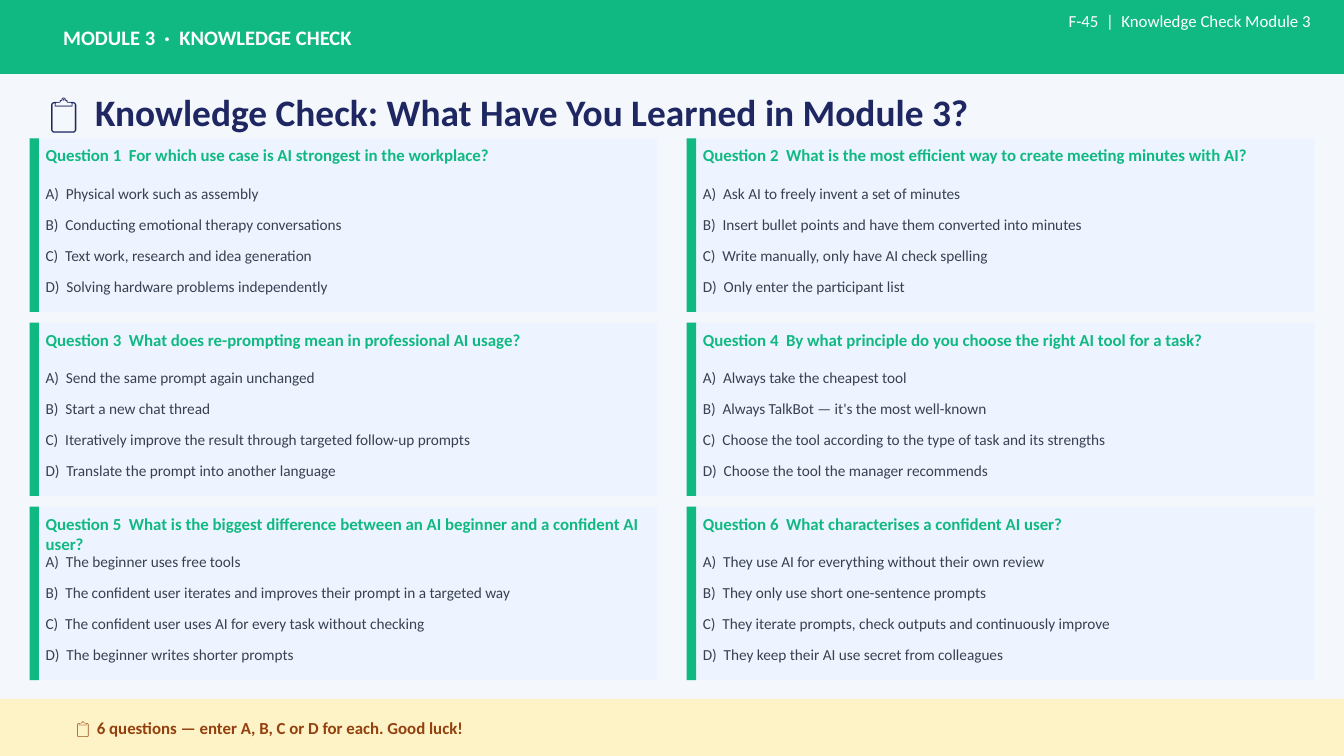
"""Build the Module 3 knowledge check slide: six multiple-choice cards in a grid."""
from pptx import Presentation
from pptx.dml.color import RGBColor
from pptx.enum.shapes import MSO_SHAPE
from pptx.enum.text import MSO_ANCHOR, MSO_AUTO_SIZE, PP_ALIGN
from pptx.util import Inches, Pt

RECT = MSO_SHAPE.RECTANGLE
TOP, MIDDLE = MSO_ANCHOR.TOP, MSO_ANCHOR.MIDDLE
LEFT, RIGHT = PP_ALIGN.LEFT, PP_ALIGN.RIGHT
FIXED = MSO_AUTO_SIZE.NONE


class Theme:
    font = "Calibri"
    page, card, foot = "F4F7FB", "EEF4FF", "FEF3C7"
    green, navy, grey, brown, white = "10B981", "1E2761", "374151", "92400E", "FFFFFF"
    title, head, body, small = 20, 11, 9, 8.2


WIDE = 10
HIGH = WIDE * 9 / 16
COLS, GAP = 2, 0.22
CARD_W = (WIDE - (COLS + 1) * GAP) / COLS
CARD_H, ROW_GAP = 1.29, 0.08
GRID_TOP = 1.03
BAR, INSET = 0.07, 0.09
HEAD_H, FOOT_TOP = 0.55, 5.2
FOOT_H = HIGH - FOOT_TOP
STEP = 0.23

QUIZ = [
    ("For which use case is AI strongest in the workplace?",
     ["Physical work such as assembly",
      "Conducting emotional therapy conversations",
      "Text work, research and idea generation",
      "Solving hardware problems independently"]),
    ("What is the most efficient way to create meeting minutes with AI?",
     ["Ask AI to freely invent a set of minutes",
      "Insert bullet points and have them converted into minutes",
      "Write manually, only have AI check spelling",
      "Only enter the participant list"]),
    ("What does re-prompting mean in professional AI usage?",
     ["Send the same prompt again unchanged",
      "Start a new chat thread",
      "Iteratively improve the result through targeted follow-up prompts",
      "Translate the prompt into another language"]),
    ("By what principle do you choose the right AI tool for a task?",
     ["Always take the cheapest tool",
      "Always TalkBot — it's the most well-known",
      "Choose the tool according to the type of task and its strengths",
      "Choose the tool the manager recommends"]),
    ("What is the biggest difference between an AI beginner and a confident AI user?",
     ["The beginner uses free tools",
      "The confident user iterates and improves their prompt in a targeted way",
      "The confident user uses AI for every task without checking",
      "The beginner writes shorter prompts"]),
    ("What characterises a confident AI user?",
     ["They use AI for everything without their own review",
      "They only use short one-sentence prompts",
      "They iterate prompts, check outputs and continuously improve",
      "They keep their AI use secret from colleagues"]),
]

deck = Presentation()
deck.slide_width, deck.slide_height = Inches(WIDE), Inches(HIGH)
slide = deck.slides.add_slide(deck.slide_layouts[5])
slide.background.fill.solid()
slide.background.fill.fore_color.rgb = RGBColor.from_string(Theme.page)


def block(box, fill):
    shape = slide.shapes.add_shape(RECT, *map(Inches, box))
    shape.shadow.inherit = False
    shape.fill.solid()
    shape.fill.fore_color.rgb = RGBColor.from_string(fill)
    shape.line.fill.background()


def write(text, box, size, color, bold=False, align=LEFT, anchor=MIDDLE,
          pad=(0.07, 0.05, 0.07, 0.05), shape=None):
    area = [Inches(n) for n in box]
    shape = shape or slide.shapes.add_textbox(*area)
    shape.left, shape.top, shape.width, shape.height = area
    frame = shape.text_frame
    frame.word_wrap, frame.auto_size = True, FIXED
    frame.vertical_anchor = anchor
    frame.margin_left, frame.margin_top, frame.margin_right, frame.margin_bottom = map(Inches, pad)
    line = frame.paragraphs[0]
    line.alignment = align
    run = line.add_run()
    run.text = text
    run.font.name, run.font.size, run.font.bold = Theme.font, Pt(size), bold
    run.font.color.rgb = RGBColor.from_string(color)


block((0, 0, WIDE, HEAD_H), Theme.green)
write("MODULE 3  ·  KNOWLEDGE CHECK", (0.4, 0, 0.6 * WIDE, HEAD_H),
      Theme.head, Theme.white, bold=True)
write("📋  Knowledge Check: What Have You Learned in Module 3?",
      (0.3, 0.64, 0.94 * WIDE, 0.38), Theme.title, Theme.navy, bold=True,
      shape=slide.shapes.title)

for i, (ask, picks) in enumerate(QUIZ):
    row, col = divmod(i, COLS)
    x = GAP + col * (CARD_W + GAP)
    y = GRID_TOP + row * (CARD_H + ROW_GAP)
    wide = CARD_W - INSET - 0.02
    block((x, y, CARD_W, CARD_H), Theme.card)
    block((x, y, BAR, CARD_H), Theme.green)
    write(f"Question {i + 1}  {ask}", (x + INSET, y + 0.03, wide, 0.31),
          Theme.body, Theme.green, bold=True, anchor=TOP, pad=(0.03, 0.02, 0.03, 0))
    for n, pick in enumerate(picks):
        write(f"{'ABCD'[n]})  {pick}", (x + INSET, y + 0.34 + n * STEP, wide, 0.22),
              Theme.small, Theme.grey, anchor=TOP, pad=(0.03, 0, 0.03, 0))

block((0, FOOT_TOP, WIDE, FOOT_H), Theme.foot)
write("📋  6 questions — enter A, B, C or D for each. Good luck!",
      (0.5, FOOT_TOP, 0.9 * WIDE, FOOT_H), Theme.body, Theme.brown, bold=True)
write("F-45  |  Knowledge Check Module 3", (5.05, 0.03, 0.48 * WIDE, 0.48),
      Theme.body, Theme.white, align=RIGHT, anchor=TOP, pad=(0.1, 0.05, 0.1, 0.05))

deck.save("out.pptx")
